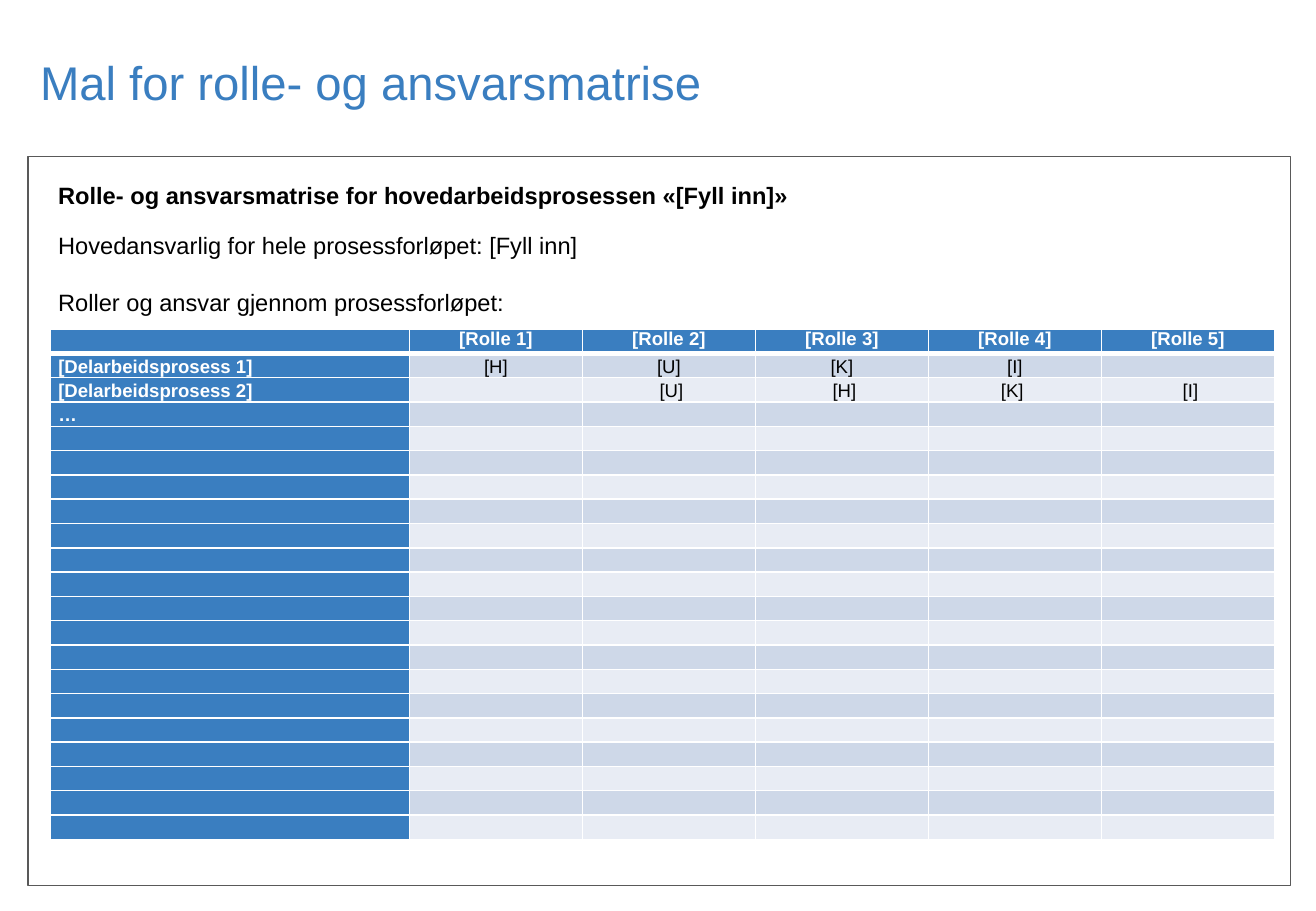
"""Build a slide with a template for a role and responsibility matrix."""
from lxml import etree
from pptx import Presentation
from pptx import util as u
from pptx.dml.color import RGBColor
from pptx.enum import shapes, text
from pptx.oxml import ns

BLUE, WHITE, BLACK, GREY = "3A7EC0", "FFFFFF", "000000", "595959"
BANDS = ["E8ECF4", "CED8E8"]
ROW_COUNT = 21
TABLE_WIDTH, PROCESS_WIDTH = 10.08, 2.96
COLUMN_WIDTHS = [PROCESS_WIDTH] + [(TABLE_WIDTH - PROCESS_WIDTH) / 5] * 5
MATRIX = [
    ["", "[Rolle 1]", "[Rolle 2]", "[Rolle 3]", "[Rolle 4]", "[Rolle 5]"],
    ["[Delarbeidsprosess 1]", "[H]", "[U]", "[K]", "[I]", ""],
    ["[Delarbeidsprosess 2]", "", " [U]", " [H]", "[K] ", " [I]"],
    ["…"],
]
INTRODUCTION = [
    (1.44, True, "Rolle- og ansvarsmatrise for hovedarbeidsprosessen «[Fyll inn]»"),
    (1.85, False, "Hovedansvarlig for hele prosessforløpet: [Fyll inn]"),
    (2.32, False, "Roller og ansvar gjennom prosessforløpet:"),
]


def color(value):
    return RGBColor.from_string(value)


def write(paragraph, words, size, hex_color, bold=False):
    run = paragraph.add_run()
    run.text = words
    values = {"name": "Arial", "size": u.Pt(size), "bold": bold}
    for name, value in values.items():
        setattr(run.font, name, value)
    run.font.color.rgb = color(hex_color)


presentation = Presentation()
presentation.slide_width = u.Inches(10.83)
presentation.slide_height = u.Inches(7.5)
slide = presentation.slides.add_slide(presentation.slide_layouts[5])

title = slide.shapes.title
title_place = {"left": 0.23, "top": 0.37, "width": 10.39, "height": 0.61}
for name, value in title_place.items():
    setattr(title, name, u.Inches(value))
title.text_frame.vertical_anchor = text.MSO_ANCHOR.MIDDLE
paragraph = title.text_frame.paragraphs[0]
paragraph.alignment = text.PP_ALIGN.LEFT
write(paragraph, "Mal for rolle- og ansvarsmatrise", 28, BLUE)

frame = slide.shapes.add_shape(
    shapes.MSO_SHAPE.RECTANGLE,
    u.Inches(0.23), u.Inches(1.29), u.Inches(10.39), u.Inches(6))
frame.shadow.inherit = False
frame.fill.background()
frame.line.color.rgb = color(GREY)
frame.line.width = u.Pt(0.75)

table = slide.shapes.add_table(
    ROW_COUNT, len(COLUMN_WIDTHS), u.Inches(0.41), u.Inches(2.71),
    u.Inches(TABLE_WIDTH), u.Inches(0.2 * ROW_COUNT)).table
table.horz_banding = False
for column, width in zip(table.columns, COLUMN_WIDTHS):
    column.width = u.Inches(width)

cell_format = {
    "margin_left": u.Inches(0.07), "margin_right": u.Inches(0.07),
    "margin_top": 0, "margin_bottom": 0,
}
for row_index, row in enumerate(table.rows):
    row.height = u.Inches(0.2)
    for column_index, cell in enumerate(row.cells):
        heading = row_index == 0 or column_index == 0
        for name, value in cell_format.items():
            setattr(cell, name, value)

        properties = cell._tc.get_or_add_tcPr()
        for side in "LRTB":
            thick = (row_index, side) in [(0, "B"), (1, "T")]
            border = etree.SubElement(
                properties, ns.qn(f"a:ln{side}"), w=str(u.Pt(3 if thick else 1)))
            fill = etree.SubElement(border, ns.qn("a:solidFill"))
            etree.SubElement(fill, ns.qn("a:srgbClr"), val=WHITE)
        cell.fill.solid()
        cell.fill.fore_color.rgb = color(BLUE if heading else BANDS[row_index % 2])

        paragraph = cell.text_frame.paragraphs[0]
        paragraph.line_spacing = 1.15 if row_index else 1.0
        if column_index:
            paragraph.alignment = text.PP_ALIGN.CENTER
        words = MATRIX[row_index] if row_index < len(MATRIX) else []
        if column_index < len(words) and words[column_index]:
            write(paragraph, words[column_index], 11, WHITE if heading else BLACK, heading)
        else:
            etree.SubElement(paragraph._p, ns.qn("a:endParaRPr"), sz="1100")

for top, bold, words in INTRODUCTION:
    box = slide.shapes.add_textbox(
        u.Inches(0.38), u.Inches(top), u.Inches(9.96), u.Inches(0.35))
    box.text_frame.word_wrap = True
    write(box.text_frame.paragraphs[0], words, 14, BLACK, bold)

presentation.save("out.pptx")
